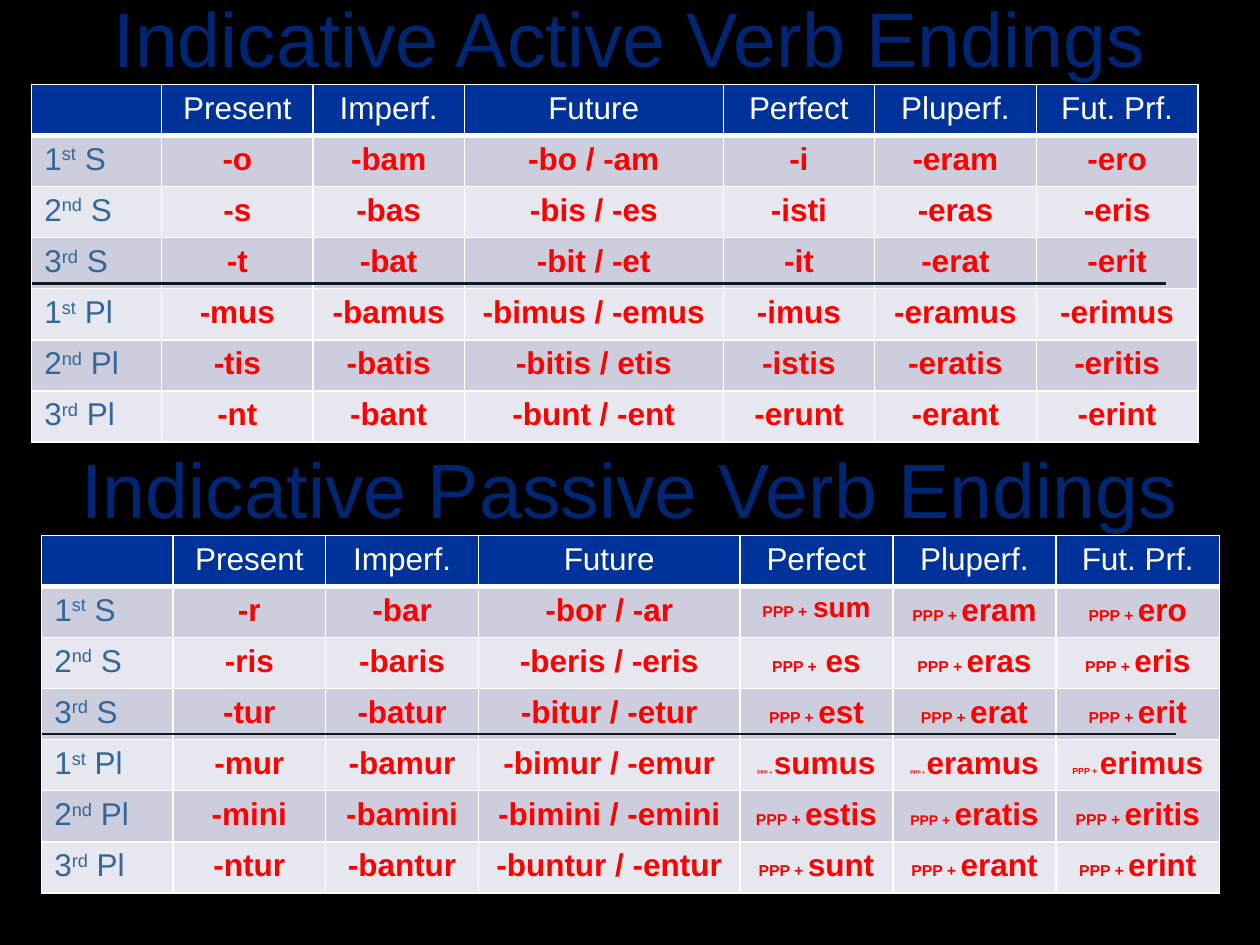
from lxml import etree
from pptx import Presentation
from pptx.dml.color import RGBColor
from pptx.enum import shapes, text
from pptx.oxml.ns import qn
from pptx.util import Cm, Pt

BLACK = RGBColor(0x00, 0x00, 0x00)
WHITE = RGBColor(0xFF, 0xFF, 0xFF)
NAVY = RGBColor(0x00, 0x26, 0x73)
BLUE = RGBColor(0x00, 0x33, 0x99)
STEEL = RGBColor(0x33, 0x66, 0x99)
RED = RGBColor(0xFF, 0x00, 0x00)
INK = RGBColor(0x10, 0x19, 0x1F)
BANDS = [RGBColor(0xCC, 0xCE, 0xDE), RGBColor(0xE7, 0xE8, 0xEF)]
FONT = "Arial"
SIZE = 18


def ppp(ending, size=9):
    return [("PPP + ", size), (ending, SIZE)]


TENSES = ["Present", "Imperf.", "Future", "Perfect", "Pluperf.", "Fut. Prf."]
PERSONS = [("1", "st", " S"), ("2", "nd", " S"), ("3", "rd", " S"),
           ("1", "st", " Pl"), ("2", "nd", " Pl"), ("3", "rd", " Pl")]
ACTIVE = [
    ["-o", "-bam", "-bo / -am", "-i", "-eram", "-ero"],
    ["-s", "-bas", "-bis / -es", "-isti", "-eras", "-eris"],
    ["-t", "-bat", "-bit / -et", "-it", "-erat", "-erit"],
    ["-mus", "-bamus", "-bimus / -emus", "-imus", "-eramus", "-erimus"],
    ["-tis", "-batis", "-bitis / etis", "-istis", "-eratis", "-eritis"],
    ["-nt", "-bant", "-bunt / -ent", "-erunt", "-erant", "-erint"],
]
PASSIVE = [
    ["-r", "-bar", "-bor / -ar",
     [("PPP +", 9), (" ", 12), ("sum", 16)], ppp("eram"), ppp("ero")],
    ["-ris", "-baris", "-beris / -eris",
     [("PPP +", 9), (" es", SIZE)], ppp("eras"), ppp("eris")],
    ["-tur", "-batur", "-bitur / -etur", ppp("est"), ppp("erat"), ppp("erit")],
    ["-mur", "-bamur", "-bimur / -emur",
     ppp("sumus", 3), ppp("eramus", 3), ppp("erimus", 5)],
    ["-mini", "-bamini", "-bimini / -emini",
     ppp("estis"), [("PPP +", 8), (" ", 9), ("eratis", SIZE)], ppp("eritis")],
    ["-ntur", "-bantur", "-buntur / -entur",
     ppp("sunt"), ppp("erant"), ppp("erint")],
]
# heading, its top, endings, table left, table top, width scale
SECTIONS = [
    ("Indicative Active Verb Endings", 0, ACTIVE, 0.64, 1.7, 1),
    ("Indicative Passive Verb Endings", 9.1, PASSIVE, 0.84, 10.79, 1.01),
]
COLUMNS = [2.62, 3.05, 3.05, 5.22, 3.05, 3.26, 3.26]
ROW_HEIGHT = 1.03
LINE_DROP, LINE_LENGTH = 4.01, 22.86


def add_run(p, words, size, color, bold=False):
    r = p.add_run()
    r.text = words
    r.font.name, r.font.size, r.font.bold = FONT, Pt(size), bold
    r.font.color.rgb = color
    return r


def paint(cell, fill, bottom=1):
    """Fill a cell and give it white borders, the bottom one in its own width."""
    tc_pr = cell._tc.get_or_add_tcPr()
    for side, width in (("L", 1), ("R", 1), ("T", 1), ("B", bottom)):
        ln = etree.SubElement(tc_pr, qn(f"a:ln{side}"), w=str(Pt(width)))
        solid = etree.SubElement(ln, qn("a:solidFill"))
        etree.SubElement(solid, qn("a:srgbClr"), val=str(WHITE))
    cell.fill.solid()
    cell.fill.fore_color.rgb = fill


def set_heading(sp, words, top):
    sp.left, sp.top, sp.width, sp.height = Cm(1.27), Cm(top), Cm(22.86), Cm(1.47)
    tf = sp.text_frame
    tf.word_wrap = True
    tf.auto_size = text.MSO_AUTO_SIZE.NONE
    tf.vertical_anchor = text.MSO_ANCHOR.MIDDLE
    p = tf.paragraphs[0]
    p.alignment = text.PP_ALIGN.CENTER
    add_run(p, words, 44, NAVY)


def add_endings(s, endings, left, top, scale):
    widths = [Cm(w * scale) for w in COLUMNS]
    n_rows = len(PERSONS) + 1
    table = s.shapes.add_table(n_rows, len(widths), Cm(left), Cm(top),
                               sum(widths), Cm(ROW_HEIGHT * n_rows)).table
    for column, width in zip(table.columns, widths):
        column.width = width
    for row in table.rows:
        row.height = Cm(ROW_HEIGHT)

    paint(table.cell(0, 0), BLUE, bottom=3)
    for j, tense in enumerate(TENSES, 1):
        cell = table.cell(0, j)
        paint(cell, BLUE, bottom=3)
        p = cell.text_frame.paragraphs[0]
        p.alignment = text.PP_ALIGN.CENTER
        add_run(p, tense, SIZE, WHITE)

    for i, (person, row) in enumerate(zip(PERSONS, endings), 1):
        band = BANDS[(i - 1) % 2]
        label = table.cell(i, 0)
        paint(label, band)
        number, ordinal, group = person
        p = label.text_frame.paragraphs[0]
        add_run(p, number, SIZE, STEEL)
        r = add_run(p, ordinal, SIZE, STEEL)
        r.font._element.set("baseline", "30000")
        add_run(p, group, SIZE, STEEL)
        for j, ending in enumerate(row, 1):
            cell = table.cell(i, j)
            paint(cell, band)
            p = cell.text_frame.paragraphs[0]
            p.alignment = text.PP_ALIGN.CENTER
            runs = [(ending, SIZE)] if isinstance(ending, str) else ending
            for words, size in runs:
                add_run(p, words, size, RED, bold=True)


def add_divider(s, left, y):
    line = s.shapes.add_connector(shapes.MSO_CONNECTOR.STRAIGHT, Cm(left), Cm(y),
                                  Cm(left + LINE_LENGTH), Cm(y))
    line.line.color.rgb = INK
    line.line.width = Pt(1.5)
    etree.SubElement(line._element.spPr, qn("a:effectLst"))


def main():
    prs = Presentation()
    prs.slide_width, prs.slide_height = Cm(25.4), Cm(19.05)
    s = prs.slides.add_slide(prs.slide_layouts[5])
    s.background.fill.solid()
    s.background.fill.fore_color.rgb = BLACK

    for k, (heading, heading_top, endings, left, top, scale) in enumerate(SECTIONS):
        sp = s.shapes.title if k == 0 else s.shapes.add_textbox(0, 0, 0, 0)
        set_heading(sp, heading, heading_top)
        add_endings(s, endings, left, top, scale)
    for _, _, _, left, top, _ in SECTIONS:
        add_divider(s, left, top + LINE_DROP)
    prs.save("out.pptx")


if __name__ == "__main__":
    main()
